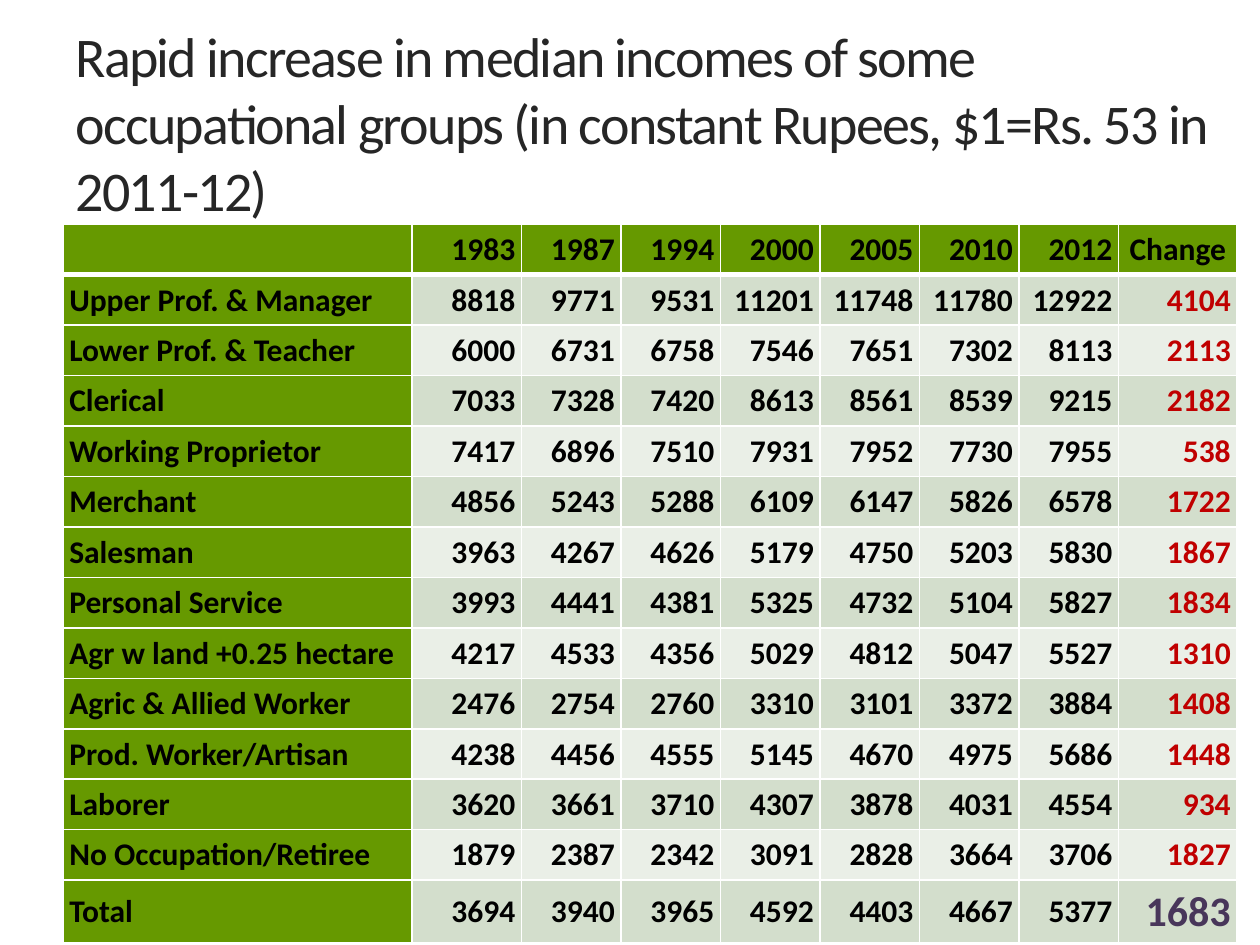
from lxml import etree
from pptx import Presentation, util as u
from pptx.dml.color import RGBColor
from pptx.enum import text as t
from pptx.oxml import ns

COLORS = {
    "white": "FFFFFF", "title": "262626", "black": "000000", "green": "669900",
    "dark_band": "D3DECC", "light_band": "EAEFE7", "change": "C00000", "total": "48365A",
}
TITLE = ("Rapid increase in median incomes of some occupational groups "
         "(in constant Rupees, $1=Rs. 53 in 2011-12)")
INCOMES = [
    ("", 1983, 1987, 1994, 2000, 2005, 2010, 2012, "Change"),
    ("Upper Prof. & Manager", 8818, 9771, 9531, 11201, 11748, 11780, 12922, 4104),
    ("Lower Prof. & Teacher", 6000, 6731, 6758, 7546, 7651, 7302, 8113, 2113),
    ("Clerical", 7033, 7328, 7420, 8613, 8561, 8539, 9215, 2182),
    ("Working Proprietor", 7417, 6896, 7510, 7931, 7952, 7730, 7955, 538),
    ("Merchant", 4856, 5243, 5288, 6109, 6147, 5826, 6578, 1722),
    ("Salesman", 3963, 4267, 4626, 5179, 4750, 5203, 5830, 1867),
    ("Personal Service", 3993, 4441, 4381, 5325, 4732, 5104, 5827, 1834),
    ("Agr w land +0.25 hectare", 4217, 4533, 4356, 5029, 4812, 5047, 5527, 1310),
    ("Agric & Allied Worker", 2476, 2754, 2760, 3310, 3101, 3372, 3884, 1408),
    ("Prod. Worker/Artisan", 4238, 4456, 4555, 5145, 4670, 4975, 5686, 1448),
    ("Laborer", 3620, 3661, 3710, 4307, 3878, 4031, 4554, 934),
    ("No Occupation/Retiree", 1879, 2387, 2342, 3091, 2828, 3664, 3706, 1827),
    ("Total", 3694, 3940, 3965, 4592, 4403, 4667, 5377, 1683),
]
COLUMN_WIDTHS = [2.77, 0.87] + [0.79] * 6 + [0.94]
ROW_HEIGHTS = [0.4] * 13 + [0.5]
LAST_ROW = len(INCOMES) - 1
LAST_COLUMN = len(COLUMN_WIDTHS) - 1


def rgb(name):
    return RGBColor.from_string(COLORS[name])


def write(frame, words, size=18, color="black", bold=False,
          align=t.PP_ALIGN.LEFT, spacing=None):
    frame.word_wrap = True
    para = frame.paragraphs[0]
    para.alignment = align
    span = para.add_run()
    span.text = words
    span.font.name = "Calibri"
    span.font.size = u.Pt(size)
    span.font.bold = bold
    span.font.color.rgb = rgb(color)
    if spacing is not None:
        span.font._element.set("spc", str(spacing * 100))


def add_title(page):
    box = page.shapes.add_textbox(u.Inches(0.5), u.Inches(0.3), u.Inches(9.3), u.Inches(1.34))
    box.fill.solid()
    box.fill.fore_color.rgb = rgb("white")
    box.text_frame.vertical_anchor = t.MSO_ANCHOR.MIDDLE
    write(box.text_frame, TITLE, size=32, color="title", spacing=-1)


def set_borders(cell, top=1, bottom=1):
    properties = cell._tc.get_or_add_tcPr()
    sides = {"lnL": 1, "lnR": 1, "lnT": top, "lnB": bottom}
    for index, (side, width) in enumerate(sides.items()):
        line = etree.Element(ns.qn(f"a:{side}"), w=str(u.Pt(width)))
        fill = etree.SubElement(line, ns.qn("a:solidFill"))
        etree.SubElement(fill, ns.qn("a:srgbClr"), val=COLORS["white"])
        properties.insert(index, line)


def cell_fill(row, column):
    if row == 0 or column == 0:
        return "green"
    return "dark_band" if row % 2 else "light_band"


def cell_format(row, column):
    if column == 0:
        return {}
    if column < LAST_COLUMN:
        return {"align": t.PP_ALIGN.RIGHT}
    if row == 0:
        return {"align": t.PP_ALIGN.CENTER}
    if row == LAST_ROW:
        return {"align": t.PP_ALIGN.RIGHT, "color": "total", "size": 24}
    return {"align": t.PP_ALIGN.RIGHT, "color": "change"}


def fill_cell(cell, value, row, column):
    cell.margin_left = cell.margin_right = u.Inches(0.05)
    cell.margin_top = cell.margin_bottom = u.Inches(0.05)
    cell.vertical_anchor = t.MSO_ANCHOR.MIDDLE
    cell.fill.solid()
    cell.fill.fore_color.rgb = rgb(cell_fill(row, column))
    set_borders(cell, top=3 if row == 1 else 1, bottom=3 if row == 0 else 1)
    if value != "":
        write(cell.text_frame, str(value), bold=True, **cell_format(row, column))


def add_income_table(page):
    table = page.shapes.add_table(
        len(INCOMES), len(COLUMN_WIDTHS), u.Inches(0.5), u.Inches(1.78),
        u.Inches(sum(COLUMN_WIDTHS)), u.Inches(sum(ROW_HEIGHTS))).table
    table.first_col = True
    for column, width in zip(table.columns, COLUMN_WIDTHS):
        column.width = u.Inches(width)
    for row, height in zip(table.rows, ROW_HEIGHTS):
        row.height = u.Inches(height)
    for row, values in enumerate(INCOMES):
        for column, value in enumerate(values):
            fill_cell(table.cell(row, column), value, row, column)


def main():
    deck = Presentation()
    deck.slide_width, deck.slide_height = u.Inches(10), u.Inches(7.5)
    page = deck.slides.add_slide(deck.slide_layouts[6])
    add_title(page)
    add_income_table(page)
    deck.save("out.pptx")


if __name__ == "__main__":
    main()
